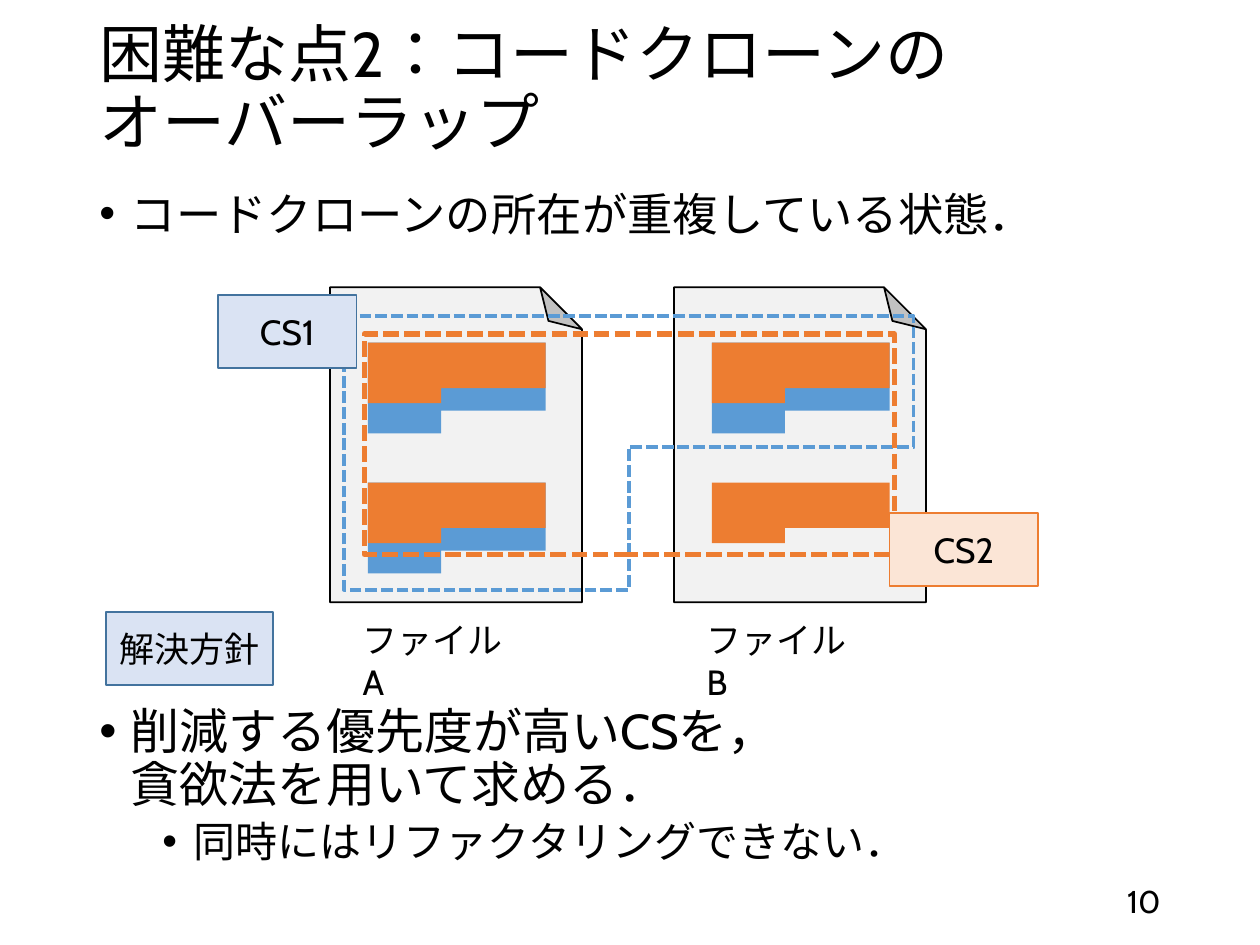
from lxml import etree
from pptx import Presentation
from pptx.dml.color import RGBColor
from pptx.enum.dml import MSO_LINE
from pptx.enum.lang import MSO_LANGUAGE_ID
from pptx.enum.shapes import MSO_SHAPE
from pptx.enum.text import MSO_ANCHOR, PP_ALIGN
from pptx.oxml.ns import qn
from pptx.util import Inches, Pt

RECTANGLE, FOLDED_CORNER = MSO_SHAPE.RECTANGLE, MSO_SHAPE.FOLDED_CORNER
TOP, MIDDLE = MSO_ANCHOR.TOP, MSO_ANCHOR.MIDDLE
LEFT, CENTER, RIGHT = PP_ALIGN.LEFT, PP_ALIGN.CENTER, PP_ALIGN.RIGHT
DASH = MSO_LINE.SQUARE_DOT
JAPANESE = MSO_LANGUAGE_ID.JAPANESE

COLORS = {
    "text": "000000",
    "sheet": "F2F2F2",
    "blue": "5B9BD5",
    "orange": "ED7D31",
    "pale_blue": "DAE3F3",
    "dark_blue": "43739E",
    "pale_orange": "FBE5D6",
}


class SlideBuilder:
    """Draw styled elements on one slide."""

    def __init__(self, slide, font="Cabin"):
        self.slide = slide
        self.font = font

    def color(self, name):
        return RGBColor.from_string(COLORS[name])

    def style(self, shape, fill=None, line=None, width=1, dash=None):
        shape.shadow.inherit = False
        if fill:
            shape.fill.solid()
            shape.fill.fore_color.rgb = self.color(fill)
        else:
            shape.fill.background()
        if line:
            shape.line.color.rgb = self.color(line)
            shape.line.width = Pt(width)
            if dash:
                shape.line.dash_style = dash
        else:
            shape.line.fill.background()

    def add_spans(self, para, text, size, align=LEFT):
        para.alignment = align
        for index, part in enumerate(text.split("\n")):
            if index:
                para.add_line_break()
            span = para.add_run()
            span.text = part
            span.font.name = self.font
            span.font.size = Pt(size)
            span.font.color.rgb = self.color("text")
            span.font.language_id = JAPANESE

    def text_box(self, bounds, anchor=TOP):
        box = self.slide.shapes.add_textbox(*map(Inches, bounds))
        box.text_frame.word_wrap = True
        box.text_frame.vertical_anchor = anchor
        return box.text_frame

    def text(self, bounds, text, size, align=LEFT, anchor=TOP, spacing=None, right_inset=0.1):
        frame = self.text_box(bounds, anchor)
        frame.margin_right = Inches(right_inset)
        para = frame.paragraphs[0]
        para.line_spacing = spacing
        self.add_spans(para, text, size, align)

    def bullets(self, bounds, items, spacing):
        frame = self.text_box(bounds)
        for index, (level, text, size) in enumerate(items):
            para = frame.add_paragraph() if index else frame.paragraphs[0]
            para.level = level
            para.line_spacing = spacing
            para.space_before = Pt(5 if level else 10)
            properties = para._p.get_or_add_pPr()
            properties.set("marL", str(Inches(0.25 + 0.5 * level)))
            properties.set("indent", str(Inches(-0.25)))
            etree.SubElement(properties, qn("a:buFont")).set("typeface", "Arial")
            etree.SubElement(properties, qn("a:buChar")).set("char", "•")
            self.add_spans(para, text, size)

    def preset(self, kind, bounds, **style):
        shape = self.slide.shapes.add_shape(kind, *map(Inches, bounds))
        self.style(shape, **style)
        return shape

    def label(self, bounds, text, fill, line):
        frame = self.preset(RECTANGLE, bounds, fill=fill, line=line).text_frame
        frame.word_wrap = True
        frame.vertical_anchor = MIDDLE
        self.add_spans(frame.paragraphs[0], text, 20, CENTER)

    def polygon(self, points, **style):
        start, *others = [(Inches(x), Inches(y)) for x, y in points]
        builder = self.slide.shapes.build_freeform(*start)
        builder.add_line_segments(others, close=True)
        self.style(builder.convert_to_shape(), **style)

    def clone(self, left, top, height, fill):
        step, right, shallow = left + 0.58, left + 1.41, top + 0.75 * height
        bottom = top + height
        points = [(left, top), (right, top), (right, shallow),
                  (step, shallow), (step, bottom), (left, bottom)]
        self.polygon(points, fill=fill)

    def source_file(self, left, name, clones):
        sheet = self.preset(FOLDED_CORNER, (left, 2.28, 2, 2.5), fill="sheet", line="text")
        sheet.rotation = 180
        sheet._element.spPr.find(qn("a:xfrm")).set("flipH", "1")
        heights = {"blue": 0.72, "orange": 0.48}
        for top, fills in clones:
            for fill in fills:
                self.clone(left + 0.3, top, heights[fill], fill)
        self.text((left + 0.16, 4.86, 1.5, 0.44), name, 20, right_inset=0.22)


def main():
    deck = Presentation()
    deck.slide_width, deck.slide_height = Inches(10), Inches(7.5)
    page = SlideBuilder(deck.slides.add_slide(deck.slide_layouts[6]))

    page.text((0.69, 0, 8.62, 1.45), "困難な点2：コードクローンの\nオーバーラップ", 36,
              anchor=MIDDLE, spacing=0.9)
    page.bullets((0.69, 1.51, 8.62, 0.47),
                 [(0, "コードクローンの所在が重複している状態．", 25.9)], 0.8)
    page.text((7.06, 6.95, 2.25, 0.4), "10", 18, align=RIGHT, anchor=MIDDLE)

    both = ("blue", "orange")
    page.source_file(2.62, "ファイルA", [(2.72, both), (3.83, both)])
    page.source_file(5.35, "ファイルB", [(2.72, both), (3.83, ("orange",))])

    first_set = [(2.73, 2.51), (7.25, 2.51), (7.25, 3.55),
                 (4.99, 3.55), (4.99, 4.68), (2.73, 4.68)]
    page.polygon(first_set, line="blue", width=2.25, dash=DASH)
    page.label((1.73, 2.34, 1.1, 0.58), "CS1", "pale_blue", "dark_blue")
    page.preset(RECTANGLE, (2.89, 2.65, 4.21, 1.75), line="orange", width=3, dash=DASH)
    page.label((7.06, 4.07, 1.18, 0.58), "CS2", "pale_orange", "orange")

    page.bullets((0.69, 5.56, 8.62, 1.42), [
        (0, "削減する優先度が高いCSを，\n貪欲法を用いて求める．", 28),
        (1, "同時にはリファクタリングできない．", 24),
    ], 0.9)
    page.label((0.84, 4.86, 1.33, 0.58), "解決方針", "pale_blue", "dark_blue")
    deck.save("out.pptx")


if __name__ == "__main__":
    main()
